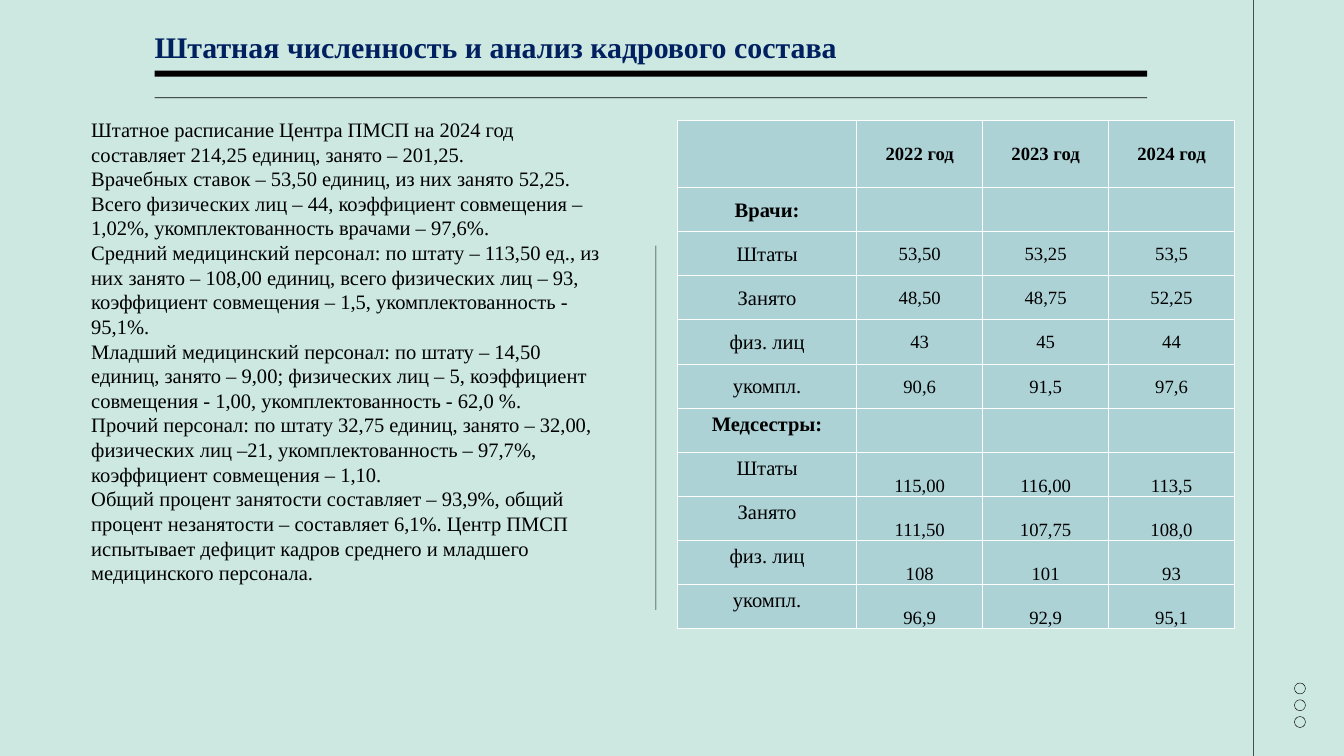
from lxml import etree
from pptx import Presentation
from pptx import util as u
from pptx.dml.color import RGBColor
from pptx.enum import shapes, text
from pptx.oxml import ns

WIDTH, HEIGHT = u.Inches(20), u.Inches(11.25)
FONT = "Times New Roman"
MINT = RGBColor(0xCC, 0xE8, 0xE1)
TEAL = RGBColor(0xAD, 0xD2, 0xD6)
NAVY = RGBColor(0x00, 0x20, 0x60)
BLACK = RGBColor(0x00, 0x00, 0x00)
WHITE = RGBColor(0xFF, 0xFF, 0xFF)
HAIR_WIDTH, HAIR_HEIGHT = 0.05, 0.09

TITLE = "Штатная численность и анализ кадрового состава"
STAFFING = [
    "Штатное расписание Центра ПМСП на 2024 год составляет 214,25 единиц, занято – 201,25.",
    "Врачебных ставок – 53,50 единиц, из них занято 52,25. Всего физических лиц – 44, "
    "коэффициент совмещения – 1,02%, укомплектованность врачами – 97,6%.",
    "Средний медицинский персонал: по штату – 113,50 ед., из них занято – 108,00 единиц, "
    "всего физических лиц – 93, коэффициент совмещения – 1,5, укомплектованность - 95,1%.",
    "Младший медицинский персонал: по штату – 14,50 единиц, занято – 9,00; физических лиц – 5, "
    "коэффициент совмещения - 1,00, укомплектованность - 62,0 %.",
    "Прочий персонал: по штату 32,75 единиц, занято – 32,00, физических лиц –21, "
    "укомплектованность – 97,7%, коэффициент совмещения – 1,10.",
    "Общий процент занятости составляет – 93,9%, общий процент незанятости – составляет 6,1%. "
    "Центр ПМСП испытывает дефицит кадров среднего и младшего медицинского персонала.",
]
YEARS = ["", "2022 год", "2023 год", "2024 год"]
DOCTORS = [
    ["Врачи:", "", "", ""],
    ["Штаты", "53,50", "53,25", "53,5"],
    ["Занято", "48,50", "48,75", "52,25"],
    ["физ. лиц", "43", "45", "44"],
    ["укомпл.", "90,6", "91,5", "97,6"],
]
NURSES = [
    ["Медсестры:", "", "", ""],
    ["Штаты", "115,00", "116,00", "113,5"],
    ["Занято", "111,50", "107,75", "108,0"],
    ["физ. лиц", "108", "101", "93"],
    ["укомпл.", "96,9", "92,9", "95,1"],
]


def across(percent):
    return u.Emu(round(WIDTH * percent / 100))


def down(percent):
    return u.Emu(round(HEIGHT * percent / 100))


def box(left, top, width, height):
    """Turn percentages of the slide into a position and size."""
    return across(left), down(top), across(width), down(height)


def set_font(paragraph, size, color=BLACK, bold=False):
    font = paragraph.font
    font.name, font.size, font.bold = FONT, u.Pt(size), bold
    font.color.rgb = color


def add_black_shape(slide, kind, *place):
    shape = slide.shapes.add_shape(kind, *box(*place))
    shape.shadow.inherit = False
    shape.fill.solid()
    shape.fill.fore_color.rgb = BLACK
    shape.line.fill.background()
    return shape


def add_rules(slide):
    for place in [
        (93.25, -1.16, HAIR_WIDTH, 103.73),
        (48.78, 32.49, HAIR_WIDTH, 48.18),
        (11.5, 9.33, 73.85, 0.8),
        (11.5, 12.89, 73.85, HAIR_HEIGHT),
    ]:
        add_black_shape(slide, shapes.MSO_SHAPE.RECTANGLE, *place)


def add_rings(slide):
    for index in range(3):
        ring = add_black_shape(slide, shapes.MSO_SHAPE.DONUT,
                               96.3, 90.31 + index * 2.22, 0.85, 1.51)
        ring.adjustments[0] = 0.04


def format_title(slide):
    title = slide.shapes.title
    title.left, title.top, title.width, title.height = box(11.5, 4.53, 61.75, 4)
    frame = title.text_frame
    frame.text = TITLE
    frame.margin_left = frame.margin_top = frame.margin_right = frame.margin_bottom = 0
    frame.vertical_anchor = text.MSO_ANCHOR.TOP
    frame.auto_size = text.MSO_AUTO_SIZE.SHAPE_TO_FIT_TEXT
    paragraph = frame.paragraphs[0]
    paragraph.alignment = text.PP_ALIGN.LEFT
    paragraph.line_spacing = u.Pt(32.2)
    set_font(paragraph, 32, NAVY, bold=True)


def add_staffing_text(slide):
    frame = slide.shapes.add_textbox(*box(6.3, 15.02, 39, 63.47)).text_frame
    frame.word_wrap = True
    frame.auto_size = text.MSO_AUTO_SIZE.SHAPE_TO_FIT_TEXT
    frame.text = "\n".join(STAFFING)
    for paragraph in frame.paragraphs:
        set_font(paragraph, 22)


def add_cell_borders(cell):
    properties = cell._tc.get_or_add_tcPr()
    for side in ("a:lnL", "a:lnR", "a:lnT", "a:lnB"):
        line = etree.SubElement(properties, ns.qn(side), w=str(u.Pt(0.96)))
        fill = etree.SubElement(line, ns.qn("a:solidFill"))
        etree.SubElement(fill, ns.qn("a:srgbClr"), val=str(WHITE))


def fill_cell(cell, words, size, bold, anchor, padded):
    add_cell_borders(cell)
    cell.fill.solid()
    cell.fill.fore_color.rgb = TEAL
    if not words:
        return
    cell.text = words
    cell.vertical_anchor = anchor
    if not padded:
        cell.margin_left = cell.margin_top = cell.margin_right = cell.margin_bottom = 0
    paragraph = cell.text_frame.paragraphs[0]
    paragraph.alignment = text.PP_ALIGN.CENTER
    paragraph.line_spacing = 1.07
    paragraph.space_after = u.Pt(8)
    set_font(paragraph, size, bold=bold)


def add_staff_table(slide):
    rows = [YEARS] + DOCTORS + NURSES
    widths = [13.35] + [9.37] * 3
    heights = [8.89] + [5.84] * (len(rows) - 1)
    table = slide.shapes.add_table(
        len(rows), len(widths), *box(50.4, 15.91, sum(widths), sum(heights))).table
    table.first_row = table.horz_banding = False
    for column, width in zip(table.columns, widths):
        column.width = across(width)
    for row, height in zip(table.rows, heights):
        row.height = down(height)

    for row_index, row in enumerate(rows):
        is_nurse = row_index > len(DOCTORS)
        for column_index, words in enumerate(row):
            is_label = column_index == 0
            anchor = text.MSO_ANCHOR.MIDDLE
            if is_nurse:
                anchor = text.MSO_ANCHOR.TOP if is_label else text.MSO_ANCHOR.BOTTOM
            fill_cell(table.cell(row_index, column_index), words,
                      size=22 if is_label else 20,
                      bold=row_index == 0 or words.endswith(":"),
                      anchor=anchor, padded=is_label)


def main():
    presentation = Presentation()
    presentation.slide_width, presentation.slide_height = WIDTH, HEIGHT
    slide = presentation.slides.add_slide(presentation.slide_layouts.get_by_name("Title Only"))
    slide.background.fill.solid()
    slide.background.fill.fore_color.rgb = MINT
    add_rules(slide)
    format_title(slide)
    add_rings(slide)
    add_staff_table(slide)
    add_staffing_text(slide)
    presentation.save("out.pptx")


if __name__ == "__main__":
    main()
